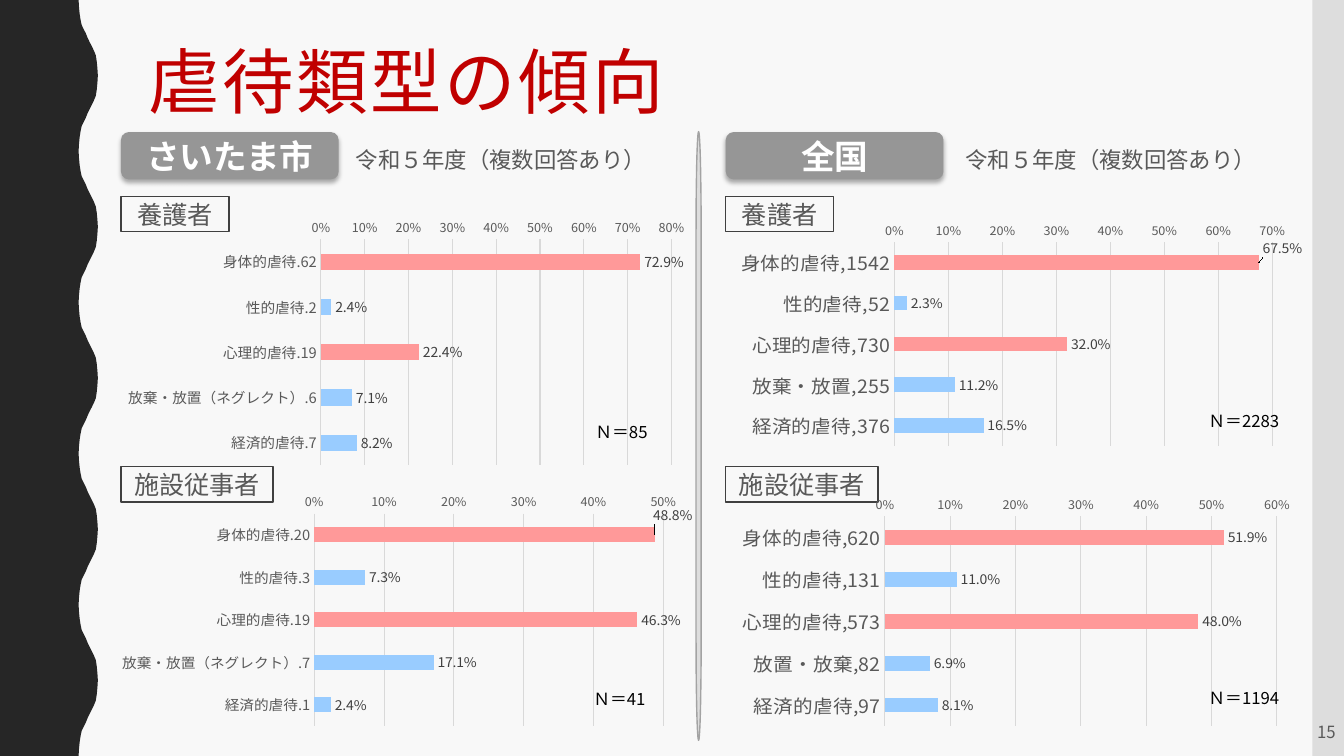
import pptx
import pptx.util
import pptx.dml.color
import pptx.chart.data
import pptx.enum.chart
import pptx.enum.shapes
import pptx.enum.text
import pptx.oxml
import pptx.oxml.ns

FONT = "Noto Sans CJK JP"
RED, BLUE, GRAY, PALE = "FF9999", "99CCFF", "595959", "DDDDDD"
GRID = "D9D9D9"
MSO = pptx.enum.shapes.MSO_SHAPE
ALIGN = pptx.enum.text.PP_ALIGN
ANCHOR = pptx.enum.text.MSO_ANCHOR
XL = pptx.enum.chart
Pt = pptx.util.Pt
rgb = pptx.dml.color.RGBColor.from_string
NS = pptx.oxml.ns.nsdecls("a", "c")

prs = pptx.Presentation()
prs.slide_width = pptx.util.Inches(13.33)
prs.slide_height = pptx.util.Inches(7.5)
COL, ROW = prs.slide_width / 100, prs.slide_height / 100
s = prs.slides.add_slide(prs.slide_layouts[6])
s.background.fill.solid()
s.background.fill.fore_color.rgb = rgb("F8F8F8")


def frame(x, y, w, h):
    return [round(v) for v in (x * COL, y * ROW, w * COL, h * ROW)]


def add_text(text, box, size, color=GRAY, bold=False, align=ALIGN.CENTER,
             anchor=ANCHOR.TOP, shape=None, fill=None, line=None):
    if shape is None:
        sp = s.shapes.add_textbox(*frame(*box))
    else:
        sp = s.shapes.add_shape(shape, *frame(*box))
        sp.shadow.inherit = False
        if fill:
            sp.fill.solid()
            sp.fill.fore_color.rgb = rgb(fill)
        else:
            sp.fill.background()
        if line:
            sp.line.color.rgb = rgb(line)
            sp.line.width = Pt(1)
        else:
            sp.line.fill.background()
    tf = sp.text_frame
    tf.word_wrap = True
    tf.vertical_anchor = anchor
    p = tf.paragraphs[0]
    p.alignment = align
    if text:
        r = p.add_run()
        r.text = text
        r.font.size = Pt(size)
        r.font.name = FONT
        r.font.bold = bold
        r.font.color.rgb = rgb(color)
    return sp


half = [(5.85, 0), (5.88, .95), (5.93, 1.87), (6, 2.67), (6.08, 3.33),
        (6.23, 3.87), (6.38, 4.4), (6.53, 5.07), (6.68, 5.6), (6.83, 6.13),
        (6.98, 6.67), (7.13, 7.33), (7.2, 8.13), (7.25, 9.05), (7.28, 10)]
wave = half + [(x, 20 - y) for x, y in reversed(half[:-1])]
edge = [(x * COL, (y + 20 * i) * ROW) for i in range(5) for x, y in wave]
fb = s.shapes.build_freeform(0, 0)
fb.add_line_segments(edge + [(0, 100 * ROW)], close=True)
sp = fb.convert_to_shape()
sp.shadow.inherit = False
sp.fill.solid()
sp.fill.fore_color.rgb = rgb("262626")
sp.line.fill.background()

add_text("", (97.65, 0, 2.35, 100), 12, shape=MSO.RECTANGLE, fill=PALE)
sp = add_text("虐待類型の傾向", (10.28, 5.6, 83.48, 21.73), 51, "C00000", align=ALIGN.LEFT)
p = sp.text_frame.paragraphs[0]
p.line_spacing = 0.9
p.runs[0].font._element.set("spc", "200")
add_text("15", (77.03, 94.27, 23.1, 5.07), 12, align=ALIGN.RIGHT, anchor=ANCHOR.MIDDLE)
sp = add_text("", (29.33, 57.33, 45.3, .67), 12, shape=MSO.FLOWCHART_TERMINATOR,
              fill=PALE, line="A3A3A3")
sp.rotation = 270

for x, region, note_x, note_w in [(9, "さいたま市", 23.85, 26.85), (54, "全国", 68.85, 27.6)]:
    sp = add_text(region, (x, 17.47, 16.2, 6.27), 24, "FFFFFF", bold=True,
                  anchor=ANCHOR.MIDDLE, shape=MSO.ROUNDED_RECTANGLE, fill="969696")
    effects = sp._element.spPr.find(pptx.oxml.ns.qn("a:effectLst"))
    effects.append(pptx.oxml.parse_xml(
        f'<a:outerShdw {NS} blurRad="44450" dist="27940" dir="5400000" rotWithShape="0">'
        '<a:srgbClr val="000000"><a:alpha val="32000"/></a:srgbClr></a:outerShdw>'))
    add_text("令和５年度（複数回答あり）", (note_x, 18.67, note_w, 4.93), 16)
    for group, y, w in [("養護者", 26, 8.03), ("施設従事者", 61.73, 11.33)]:
        add_text(group, (x, y, w, 4.67), 18, anchor=ANCHOR.MIDDLE,
                 shape=MSO.RECTANGLE, line="404040")

charts = [
    dict(box=(6.45, 28.8, 45.38, 36.53), plot=(.384, .056, .575, .839), size=10.5, top=.8,
         cats=["身体的虐待.62", "性的虐待.2", "心理的虐待.19", "放棄・放置（ネグレクト）.6", "経済的虐待.7"],
         vals=[.729, .024, .224, .071, .082], shift=None,
         total="Ｎ＝85", total_box=(43.2, 55.07, 6.08, 4)),
    dict(box=(8.03, 65.2, 43.5, 34.93), plot=(.354, .031, .599, .845), size=10.5, top=.5,
         cats=["身体的虐待.20", "性的虐待.3", "心理的虐待.19", "放棄・放置（ネグレクト）.7", "経済的虐待.1"],
         vals=[.488, .073, .463, .171, .024], shift=(-.01, -.08),
         total="Ｎ＝41", total_box=(43.05, 90.4, 6.08, 4)),
    dict(box=(54, 29.33, 42.9, 33.73), plot=(.293, .02, .656, .851), size=14, top=.7,
         cats=["身体的虐待,1542", "性的虐待,52", "心理的虐待,730", "放棄・放置,255", "経済的虐待,376"],
         vals=[.675, .023, .32, .112, .165], shift=(0, -.06),
         total="Ｎ＝2283", total_box=(88.65, 53.73, 7.8, 4)),
    dict(box=(54, 65.6, 42.9, 34.53), plot=(.276, .02, .68, .854), size=14, top=.6,
         cats=["身体的虐待,620", "性的虐待,131", "心理的虐待,573", "放置・放棄,82", "経済的虐待,97"],
         vals=[.519, .11, .48, .069, .081], shift=None,
         total="Ｎ＝1194", total_box=(88.65, 90.27, 7.8, 4)),
]
roots = [s.element]
for c in charts:
    cd = pptx.chart.data.CategoryChartData(number_format="0.0%")
    cd.categories = c["cats"]
    cd.add_series("Series 1", c["vals"])
    chart = s.shapes.add_chart(XL.XL_CHART_TYPE.BAR_CLUSTERED, *frame(*c["box"]), cd).chart
    chart.has_legend = chart.has_title = False
    chart.font.size, chart.font.name = Pt(10), FONT
    cat, val = chart.category_axis, chart.value_axis
    cat.reverse_order = True
    cat.crosses = XL.XL_AXIS_CROSSES.MAXIMUM
    cat.has_major_gridlines = False
    val.minimum_scale, val.maximum_scale, val.major_unit = 0, c["top"], .1
    val.format.line.fill.background()
    val.tick_labels.number_format = "0%"
    val.tick_labels.number_format_is_linked = False
    for line in (cat.format.line, val.major_gridlines.format.line):
        line.color.rgb = rgb(GRID)
        line.width = Pt(.75)
    for axis, size in [(cat, c["size"]), (val, 9)]:
        axis.major_tick_mark = axis.minor_tick_mark = XL.XL_TICK_MARK.NONE
        font = axis.tick_labels.font
        font.size, font.name, font.color.rgb = Pt(size), FONT, rgb(GRAY)

    bars = chart.plots[0]
    bars.gap_width = 182
    bars.vary_by_categories = False
    ser = bars.series[0]
    ser.format.fill.solid()
    ser.format.fill.fore_color.rgb = rgb(PALE)
    for i, color in enumerate([RED, BLUE, RED, BLUE, BLUE]):
        fill = ser.points[i].format.fill
        fill.solid()
        fill.fore_color.rgb = rgb(color)
    labels = ser.data_labels
    labels.show_value = True
    labels.number_format, labels.number_format_is_linked = "0.0%", False
    targets = [labels] + ([ser.points[0].data_label] if c["shift"] else [])
    for label in targets:
        label.position = XL.XL_LABEL_POSITION.OUTSIDE_END
        label.font.size, label.font.name = Pt(10), FONT
        label.font.color.rgb = rgb("404040")

    px, py, pw, ph = c["plot"]
    area = chart.element.xpath("c:chart/c:plotArea")[0]
    for old in area.findall(pptx.oxml.ns.qn("c:layout")):
        area.remove(old)
    area.insert(0, pptx.oxml.parse_xml(
        f'<c:layout {NS}><c:manualLayout><c:layoutTarget val="inner"/>'
        '<c:xMode val="edge"/><c:yMode val="edge"/>'
        f'<c:x val="{px}"/><c:y val="{py}"/><c:w val="{pw}"/><c:h val="{ph}"/>'
        '</c:manualLayout></c:layout>'))
    if c["shift"]:
        dx, dy = c["shift"]
        idx = chart.element.xpath(".//c:dLbl/c:idx")[0]
        idx.addnext(pptx.oxml.parse_xml(f'<c:numFmt {NS} formatCode="0.0%" sourceLinked="0"/>'))
        idx.addnext(pptx.oxml.parse_xml(
            f'<c:layout {NS}><c:manualLayout><c:x val="{dx}"/><c:y val="{dy}"/>'
            '</c:manualLayout></c:layout>'))
    roots.append(chart.element)
    add_text(c["total"], c["total_box"], 12, "000000")

for root in roots:
    for latin in root.xpath(".//a:latin"):
        latin.addnext(pptx.oxml.parse_xml(f'<a:ea {NS} typeface="{FONT}"/>'))

prs.save("out.pptx")
